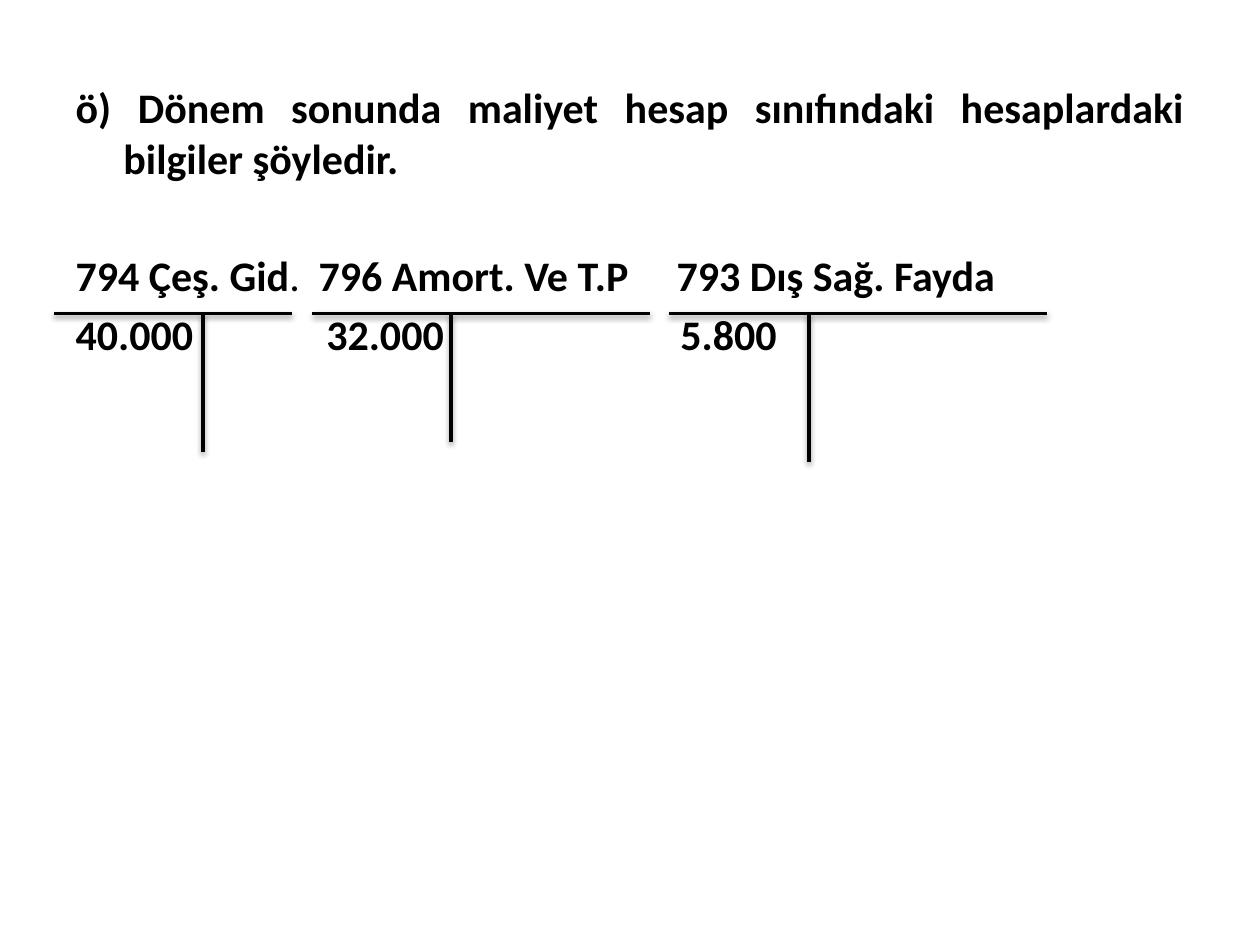
"""Build a slide with a question and three ledger T-accounts."""
from pptx import Presentation
from pptx.dml.color import RGBColor
from pptx.enum.shapes import MSO_CONNECTOR
from pptx.enum.text import MSO_ANCHOR, MSO_AUTO_SIZE, PP_ALIGN
from pptx.oxml.ns import qn
from pptx.util import Inches, Pt
from lxml.etree import SubElement

QUESTION = "ö) Dönem sonunda maliyet hesap sınıfındaki hesaplardaki bilgiler şöyledir."
ACCOUNTS = [
    {"name": [("794 Çeş. Gid", True), (".", False)], "balance": "40.000", "text_left": 0.6,
     "balance_indent": 0, "left": 0.43, "right": 2.32, "stem": 1.61, "bottom": 3.59},
    {"name": [("796 Amort. Ve T.P", True)], "balance": "32.000", "text_left": 2.53,
     "balance_indent": 0.06, "left": 2.48, "right": 5.16, "stem": 3.58, "bottom": 3.51},
    {"name": [("793 Dış Sağ. Fayda", True)], "balance": "5.800", "text_left": 5.37,
     "balance_indent": 0.03, "left": 5.31, "right": 8.31, "stem": 6.42, "bottom": 3.67},
]
BODY = {"left": 0.5, "top": 0.6, "width": 9, "height": 6.1}
TEXT_TOP, TEXT_HEIGHT, BAR_TOP = 1.98, 0.9, 2.49
THEME = {"font": "Calibri", "size": Pt(24), "ink": RGBColor(0, 0, 0), "line": Pt(2),
         "hanging": 0.38, "gap": Pt(4.8)}
FRAME = {"auto_size": MSO_AUTO_SIZE.NONE, "vertical_anchor": MSO_ANCHOR.TOP}
NO_MARGINS = dict.fromkeys(("margin_left", "margin_right", "margin_top", "margin_bottom"), 0)


def apply_formats(target, formats):
    for name, value in formats.items():
        setattr(target, name, value)


def write_paragraph(para, spans, margin=0, indent=0, **formats):
    apply_formats(para, formats)
    properties = para._p.get_or_add_pPr()
    properties.set("marL", str(Inches(margin)))
    properties.set("indent", str(Inches(indent)))
    SubElement(properties, qn("a:buNone"))
    for text, bold in spans:
        span = para.add_run()
        span.text = text
        apply_formats(span.font, {"name": THEME["font"], "size": THEME["size"], "bold": bold})
        span.font.color.rgb = THEME["ink"]


def draw_line(page, *ends):
    line = page.shapes.add_connector(MSO_CONNECTOR.STRAIGHT, *map(Inches, ends)).line
    line.color.rgb = THEME["ink"]
    line.width = THEME["line"]


def draw_account(page, account):
    left, stem = account["text_left"], account["stem"]
    box = page.shapes.add_textbox(Inches(left), Inches(TEXT_TOP),
                                  Inches(account["right"] - left + 0.1), Inches(TEXT_HEIGHT))
    frame = box.text_frame
    apply_formats(frame, {**FRAME, **NO_MARGINS, "word_wrap": False})
    write_paragraph(frame.paragraphs[0], account["name"], alignment=PP_ALIGN.LEFT)
    write_paragraph(frame.add_paragraph(), [(account["balance"], True)],
                    account["balance_indent"], alignment=PP_ALIGN.LEFT,
                    space_before=THEME["gap"])
    draw_line(page, account["left"], BAR_TOP, account["right"], BAR_TOP)
    draw_line(page, stem, BAR_TOP, stem, account["bottom"])


def main():
    deck = Presentation()
    deck.slide_width, deck.slide_height = Inches(10), Inches(7.5)
    page = deck.slides.add_slide(deck.slide_layouts[1])
    title = page.shapes.title.element
    title.getparent().remove(title)

    box = page.placeholders[1]
    apply_formats(box, {name: Inches(value) for name, value in BODY.items()})
    apply_formats(box.text_frame, {**FRAME, "word_wrap": True})
    write_paragraph(box.text_frame.paragraphs[0], [(QUESTION, True)], THEME["hanging"],
                    -THEME["hanging"], alignment=PP_ALIGN.JUSTIFY)

    for account in ACCOUNTS:
        draw_account(page, account)
    deck.save("out.pptx")


if __name__ == "__main__":
    main()
